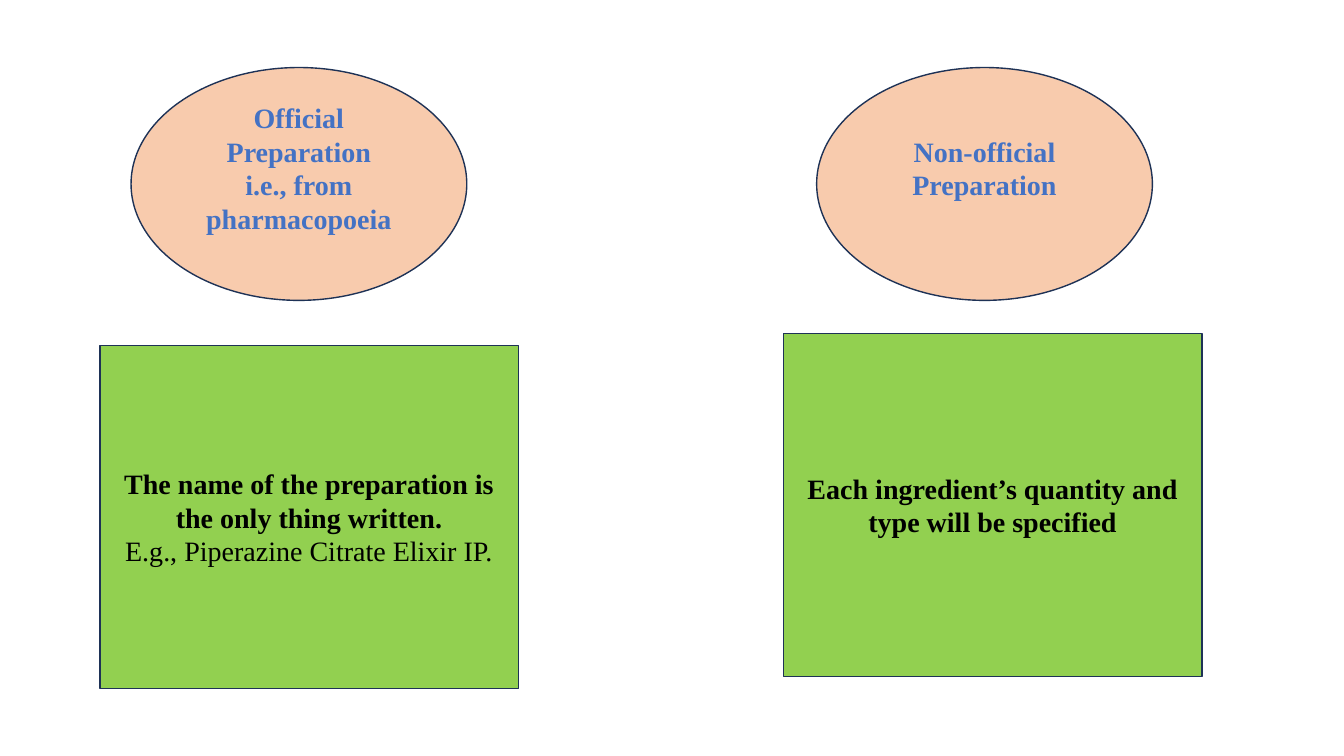
from dataclasses import dataclass
from pptx import Presentation
from pptx.dml.color import RGBColor as RGB
from pptx.enum.shapes import MSO_SHAPE as Kind
from pptx.enum.text import MSO_ANCHOR as Anchor, PP_ALIGN as Align
from pptx.util import Inches, Pt


@dataclass(frozen=True)
class Theme:
    peach: str = "F8CBAD"
    green: str = "92D050"
    navy: str = "1E3256"
    blue: str = "4472C4"
    black: str = "000000"
    font: str = "Times New Roman"
    size: int = 20
    edge: int = 1


THEME = Theme()


def add_panel(slide, kind, box, fill, ink, lines, foot=0.05):
    """Draw a filled shape; lines holds (text, bold) pairs."""
    panel = slide.shapes.add_shape(kind, *map(Inches, box))
    panel.shadow.inherit = False
    panel.fill.solid()
    panel.fill.fore_color.rgb = RGB.from_string(fill)
    panel.line.color.rgb = RGB.from_string(THEME.navy)
    panel.line.width = Pt(THEME.edge)

    frame = panel.text_frame
    frame.word_wrap = True
    frame.vertical_anchor = Anchor.MIDDLE
    frame.margin_bottom = Inches(foot)
    frame.text = "\n".join(text for text, _ in lines)
    for para, (_, bold) in zip(frame.paragraphs, lines):
        para.alignment = Align.CENTER
        for run in para.runs:
            font = run.font
            font.name = THEME.font
            font.size = Pt(THEME.size)
            font.bold = bold
            font.color.rgb = RGB.from_string(ink)


def add_head(slide, left, lines):
    # The deep foot lifts the text by half a line
    add_panel(slide, Kind.OVAL, (left, 0.67, 3.33, 2.31),
              THEME.peach, THEME.blue, lines, foot=0.37)


def add_card(slide, left, top, lines):
    add_panel(slide, Kind.RECTANGLE, (left, top, 4.15, 3.4),
              THEME.green, THEME.black, lines)


def main():
    deck = Presentation()
    deck.slide_width, deck.slide_height = Inches(13.33), Inches(7.5)
    slide = deck.slides.add_slide(deck.slide_layouts[6])

    # Kinds of preparation
    add_head(slide, 1.3, [("Official Preparation", True),
                          ("i.e., from pharmacopoeia", True)])
    add_head(slide, 8.1, [("Non-official Preparation", True)])

    # What is written for each kind
    add_card(slide, 0.99, 3.43, [
        ("The name of the preparation is the only thing written.", True),
        ("E.g., Piperazine Citrate Elixir IP.", False)])
    add_card(slide, 7.77, 3.31, [
        ("Each ingredient’s quantity and type will be specified", True)])

    deck.save("out.pptx")


if __name__ == "__main__":
    main()
